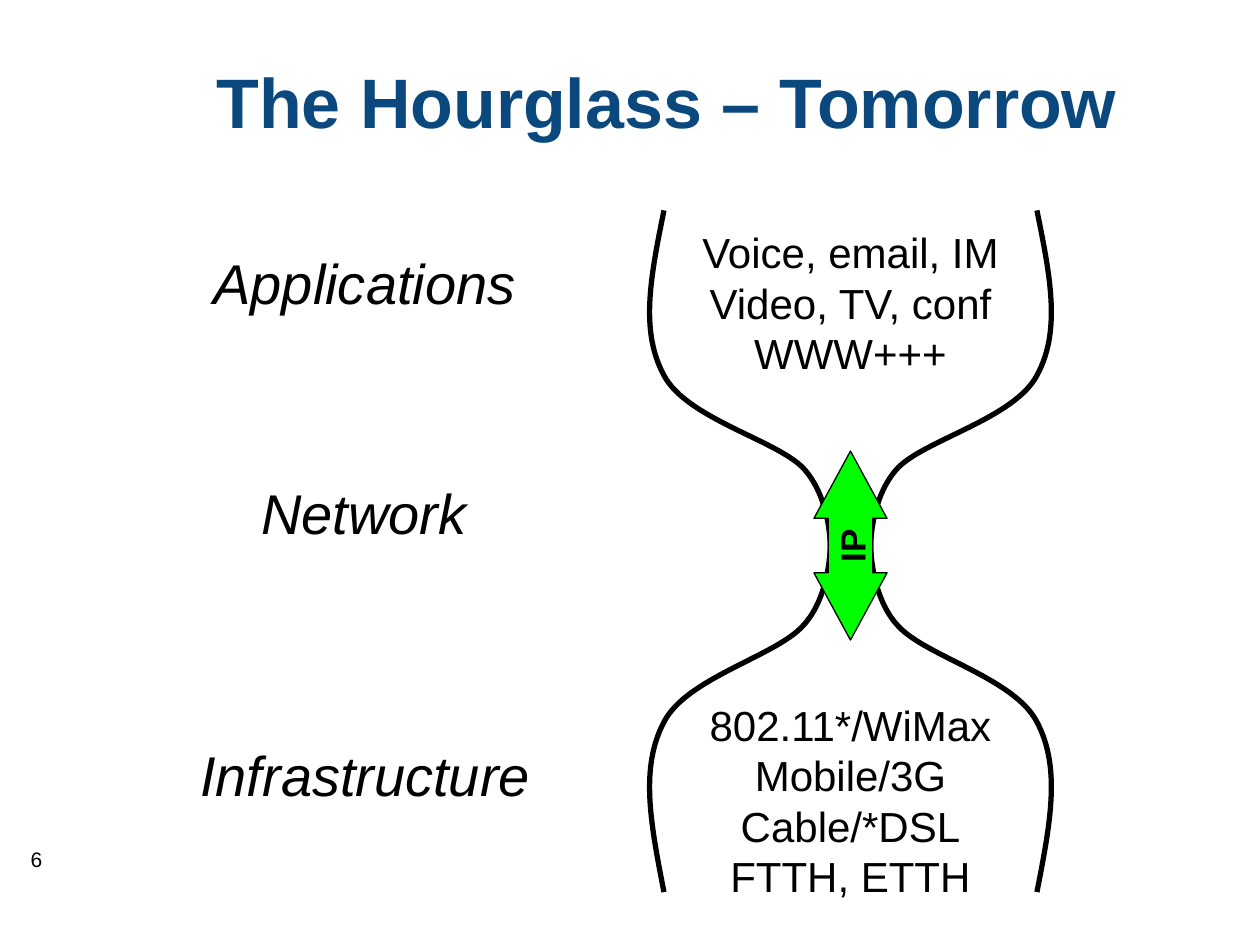
from lxml import etree
from pptx import Presentation
from pptx.dml.color import RGBColor
from pptx.enum import shapes, text
from pptx.oxml.ns import qn
from pptx.util import Inches, Pt

COLORS = {"title": "0A487D", "ink": "000000", "arrow": "00FF00"}
FONT = "Arial"

# Content: lines, box (left, top, width, height), size, style
TITLE = (["The Hourglass – Tomorrow"], (0.83, 0.17, 8.92, 1.25))
PAGE = (["6"], (0, 6.67, 0.58, 0.42))
LAYERS = [
    ("Applications", (1.53, 1.92, 2.73, 0.64)),
    ("Network", (1.91, 3.75, 1.96, 0.64)),
    ("Infrastructure", (1.42, 5.83, 2.96, 0.64)),
]
EXAMPLES = [
    (["Voice, email, IM", "Video, TV, conf", "WWW+++"], (5.46, 1.75, 2.58, 1.31)),
    (["802.11*/WiMax", "Mobile/3G", "Cable/*DSL", "FTTH, ETTH"],
     (5.52, 5.5, 2.46, 1.72)),
]

# Left wall of the hourglass: a start point, then Bezier points in threes
AXIS = 6.75
WALL_X = [5.27, 5.16, 5.08, 5.27, 5.45, 6.15, 6.37, 6.59, 6.59, 6.59]
WALL_Y = {
    "upper": [1.67, 2.21, 2.63, 2.98, 3.32, 3.49, 3.71, 3.94, 4.33, 4.33],
    "lower": [7.08, 6.52, 6.09, 5.73, 5.38, 5.21, 4.97, 4.74, 4.33, 4.33],
}


def rgb(name):
    return RGBColor.from_string(COLORS[name])


def write(tf, lines, size, color="ink", bold=False, italic=False):
    for i, line in enumerate(lines):
        p = tf.paragraphs[0] if i == 0 else tf.add_paragraph()
        p.alignment = text.PP_ALIGN.CENTER
        r = p.add_run()
        r.text = line
        r.font.name, r.font.size = FONT, Pt(size)
        r.font.bold, r.font.italic = bold, italic
        r.font.color.rgb = rgb(color)


def add_text(s, lines, box, size, wrap=False, anchor=text.MSO_ANCHOR.TOP, **style):
    tf = s.shapes.add_textbox(*map(Inches, box)).text_frame
    tf.word_wrap = wrap
    tf.vertical_anchor = anchor
    write(tf, lines, size, **style)


def add_curve(s, points):
    """Draw an open Bezier curve through a start point and triples of points."""
    pts = [(Inches(x), Inches(y)) for x, y in points]
    fb = s.shapes.build_freeform(*pts[0])
    fb.add_line_segments(pts[1:], close=False)
    sp = fb.convert_to_shape()
    sp.shadow.inherit = False
    sp.fill.background()
    sp.line.color.rgb = rgb("ink")
    sp.line.width = Pt(3)
    # Turn every three line segments into one cubic segment
    path = next(sp._element.iter(qn("a:path")))
    segments = path.findall(qn("a:lnTo"))
    for i in range(0, len(segments), 3):
        cubic = etree.SubElement(path, qn("a:cubicBezTo"))
        for seg in segments[i:i + 3]:
            cubic.append(seg[0])
            path.remove(seg)


def main():
    prs = Presentation()
    prs.slide_width, prs.slide_height = Inches(10), Inches(7.5)
    s = prs.slides.add_slide(prs.slide_layouts[6])

    # Title and page number
    add_text(s, *TITLE, 40, wrap=True, anchor=text.MSO_ANCHOR.MIDDLE,
             color="title", bold=True)
    add_text(s, *PAGE, 12, wrap=True)

    # Hourglass walls, the right one mirrored about the axis
    right_x = [2 * AXIS - x for x in WALL_X]
    for xs in (WALL_X, right_x):
        for ys in WALL_Y.values():
            add_curve(s, zip(xs, ys))

    # Layer names and examples
    for name, box in LAYERS:
        add_text(s, [name], box, 32, italic=True)
    for lines, box in EXAMPLES:
        add_text(s, lines, box, 24)

    # IP arrow at the waist
    sp = s.shapes.add_shape(shapes.MSO_SHAPE.LEFT_RIGHT_ARROW,
                            Inches(AXIS - 0.75), Inches(4.04), Inches(1.5), Inches(0.58))
    sp.rotation = 270
    sp.adjustments[0], sp.adjustments[1] = 0.61, 0.92
    sp.shadow.inherit = False
    sp.fill.solid()
    sp.fill.fore_color.rgb = rgb("arrow")
    sp.line.color.rgb = rgb("ink")
    sp.line.width = Pt(0.75)
    tf = sp.text_frame
    tf.margin_left = tf.margin_right = tf.margin_bottom = 0
    tf.margin_top = Inches(0.02)
    tf.vertical_anchor = text.MSO_ANCHOR.TOP
    write(tf, ["IP"], 20, bold=True)

    prs.save("out.pptx")


if __name__ == "__main__":
    main()
